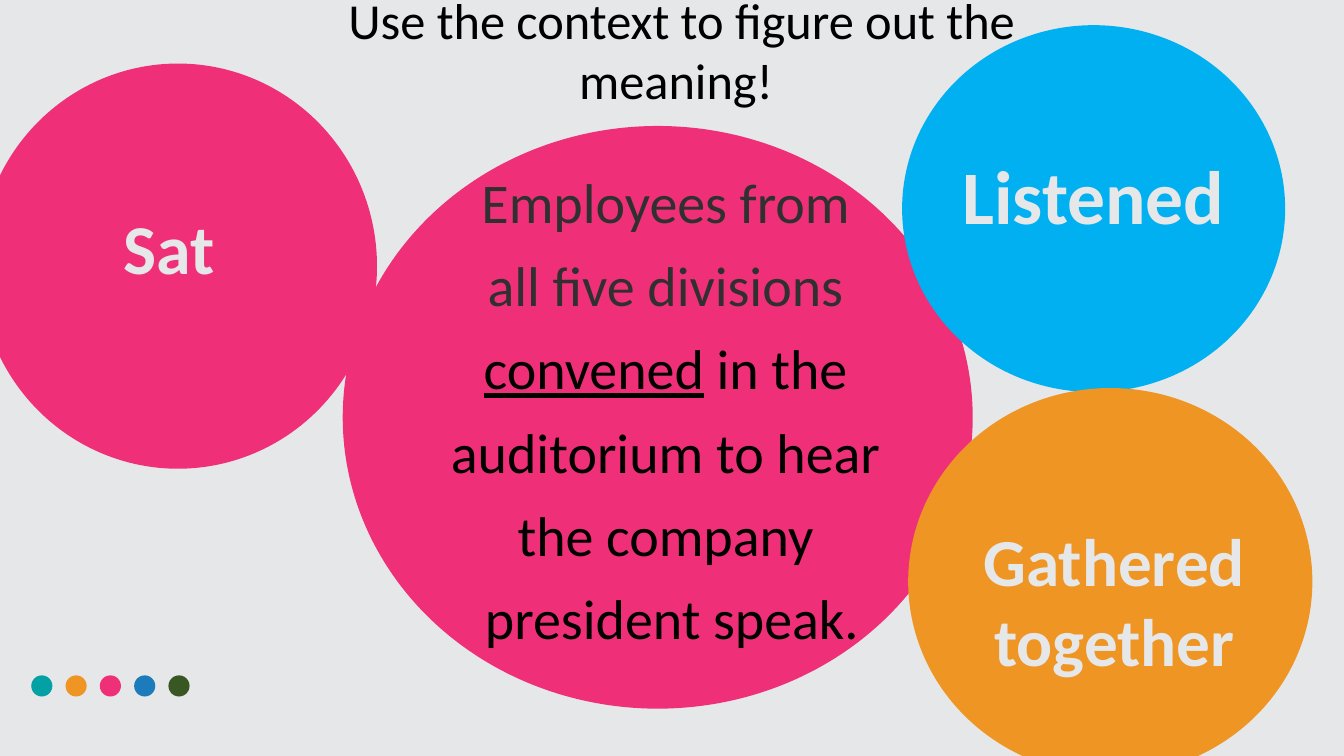
from dataclasses import dataclass

from pptx import Presentation
from pptx.dml.color import RGBColor
from pptx.enum import shapes, text
from pptx.util import Pt


@dataclass(frozen=True)
class Theme:
    font: str = "Calibri"
    paper: str = "E6E7E9"
    black: str = "000000"
    charcoal: str = "303030"
    pink: str = "EF3078"
    sky: str = "00B0F0"
    orange: str = "EE9524"
    teal: str = "03A1A4"
    blue: str = "1C7CBB"
    green: str = "385723"
    title_size: int = 36
    sentence_size: int = 40
    sat_size: int = 50
    listened_size: int = 54
    gathered_size: int = 48


theme = Theme()
deck = Presentation()
deck.slide_width, deck.slide_height = Pt(960), Pt(540)
page = deck.slides.add_slide(deck.slide_layouts[5])
page.background.fill.solid()
page.background.fill.fore_color.rgb = RGBColor.from_string(theme.paper)


def add_circle(left, top, width, height, color):
    circle = page.shapes.add_shape(
        shapes.MSO_SHAPE.OVAL, Pt(left), Pt(top), Pt(width), Pt(height))
    circle.shadow.inherit = False
    circle.fill.solid()
    circle.fill.fore_color.rgb = RGBColor.from_string(color)
    circle.line.fill.background()


def write(para, words, size, color, bold=False, underline=False):
    """Append one formatted span to a centred paragraph."""
    para.alignment = text.PP_ALIGN.CENTER
    span = para.add_run()
    span.text = words
    span.font.name = theme.font
    span.font.size = Pt(size)
    span.font.color.rgb = RGBColor.from_string(color)
    span.font.bold = bold
    span.font.underline = underline


# Title
title = page.shapes.title
title.left, title.top, title.width, title.height = Pt(180.7), Pt(-11.5), Pt(612.7), Pt(94.3)
title.text_frame.word_wrap = True
title.text_frame.auto_size = text.MSO_AUTO_SIZE.NONE
title.text_frame.vertical_anchor = text.MSO_ANCHOR.TOP
write(title.text_frame.paragraphs[0], "Use the context to figure out the meaning! ",
      size=theme.title_size, color=theme.black)

# Sentence circle, then the answer circles with their labels
add_circle(244.8, 90, 450, 416.2, theme.pink)
answers = [
    ("Listened", theme.listened_size, theme.sky,
     (644.4, 18, 273.6, 262.1), (656.6, 103, 249.1, 72.7)),
    ("Gathered together", theme.gathered_size, theme.orange,
     (648.7, 277.2, 288.7, 276.5), (664.6, 367.2, 262.8, 123.8)),
    ("Sat ", theme.sat_size, theme.pink,
     (-15.1, 45.4, 284.4, 289.4), (-15.8, 142.6, 284.4, 67.7)),
]
for answer, size, color, circle_place, label_place in answers:
    add_circle(*circle_place, color)
    label = page.shapes.add_textbox(*map(Pt, label_place))
    label.text_frame.word_wrap = True
    write(label.text_frame.paragraphs[0], answer, size=size, color=theme.paper, bold=True)

# Sentence, one paragraph per line; each span is (words, color, underline)
sentence_lines = [
    [("Employees from ", theme.charcoal, False)],
    [("all five divisions ", theme.charcoal, False)],
    [("convened", theme.black, True), (" in the ", theme.black, False)],
    [("auditorium to hear ", theme.black, False)],
    [("the company ", theme.black, False)],
    [("president speak.", theme.black, False)],
]
sentence_box = page.shapes.add_textbox(Pt(239.8), Pt(113), Pt(480.2), Pt(358.6))
sentence_box.text_frame.word_wrap = True
for index, spans in enumerate(sentence_lines):
    frame = sentence_box.text_frame
    para = frame.add_paragraph() if index else frame.paragraphs[0]
    para.line_spacing = 1.07
    para.space_after = Pt(8)
    for words, color, underline in spans:
        write(para, words, size=theme.sentence_size, color=color, underline=underline)

# Row of colour dots
dot_colors = [theme.teal, theme.orange, theme.pink, theme.blue, theme.green]
for index, color in enumerate(dot_colors):
    add_circle(22.3 + 24.5 * index, 482.4, 15.1, 15.1, color)

deck.save("out.pptx")
